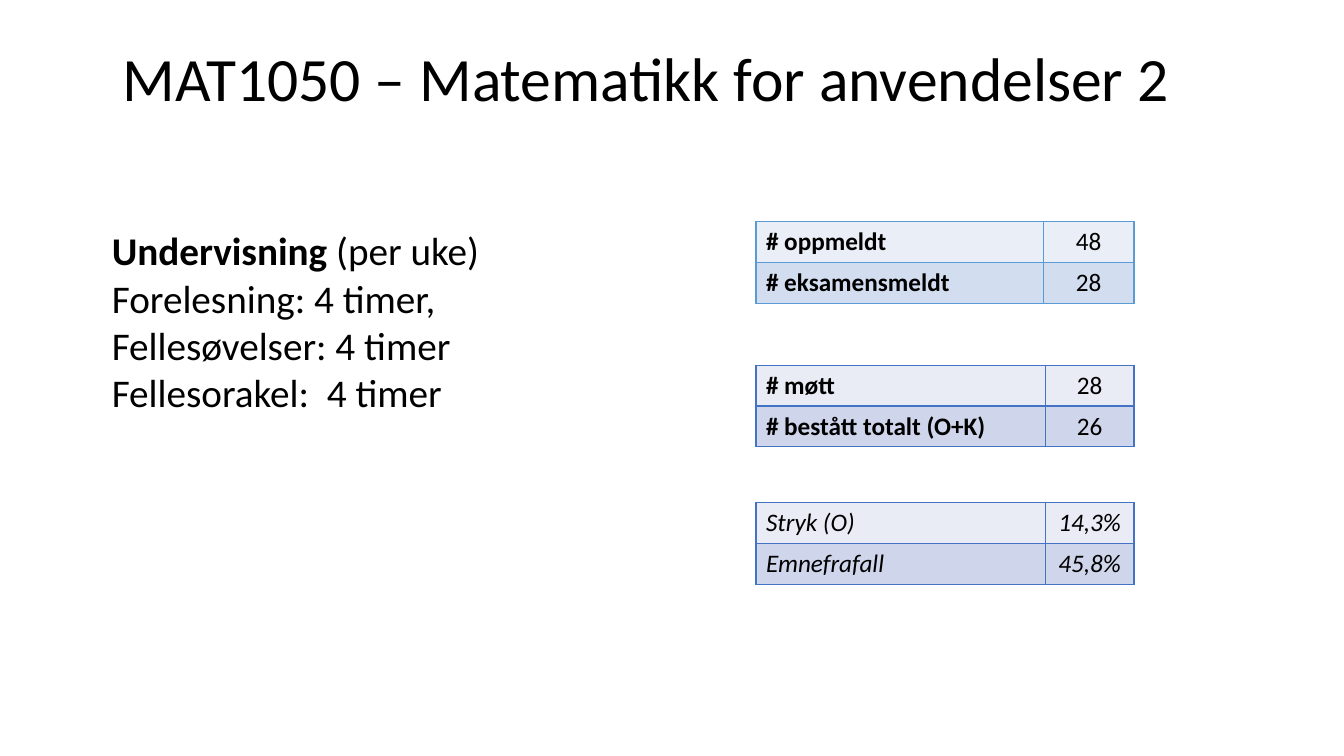
from dataclasses import dataclass

from lxml.etree import SubElement
from pptx import Presentation
from pptx.dml.color import RGBColor as RGB
from pptx.enum.text import PP_ALIGN as Align
from pptx.oxml.ns import qn
from pptx.util import Cm, Pt


@dataclass(frozen=True)
class Theme:
    font: str = "Calibri"
    text: str = "000000"
    title_size: int = 44
    body_size: int = 28
    table_size: int = 18
    border_width: int = 1
    # Border, first row, second row
    light: tuple = ("5B9BD5", "EAEFF7", "D2DEEF")
    dark: tuple = ("4472C4", "E9EBF5", "CFD5EA")


THEME = Theme()


def add_run(p, text, size, bold=False, italic=False):
    r = p.add_run()
    r.text = text
    r.font.name = THEME.font
    r.font.size = Pt(size)
    r.font.bold = bold
    r.font.italic = italic
    r.font.color.rgb = RGB.from_string(THEME.text)


def add_text(slide, box, lines, size):
    """Each line is a list of (text, bold) runs."""
    tf = slide.shapes.add_textbox(*map(Cm, box)).text_frame
    tf.word_wrap = True
    for i, line in enumerate(lines):
        p = tf.add_paragraph() if i else tf.paragraphs[0]
        for text, bold in line:
            add_run(p, text, size, bold)


def set_borders(cell, color):
    tc_pr = cell._tc.get_or_add_tcPr()
    for side in ("lnL", "lnR", "lnT", "lnB"):
        ln = SubElement(tc_pr, qn(f"a:{side}"), w=str(Pt(THEME.border_width)))
        fill = SubElement(ln, qn("a:solidFill"))
        SubElement(fill, qn("a:srgbClr"), val=color)


def add_figures(slide, box, rows, colors, value_width, italic=False):
    """Table of labels and centred values; labels are bold unless italic."""
    left, top, width, height = box
    table = slide.shapes.add_table(len(rows), 2, *map(Cm, box)).table
    table.first_row = table.horz_banding = False
    table.columns[0].width = Cm(width - value_width)
    table.columns[1].width = Cm(value_width)
    border, *fills = colors
    for i, (row, fill) in enumerate(zip(rows, fills)):
        table.rows[i].height = Cm(height / len(rows))
        for j, text in enumerate(row):
            cell = table.cell(i, j)
            set_borders(cell, border)
            cell.fill.solid()
            cell.fill.fore_color.rgb = RGB.from_string(fill)
            p = cell.text_frame.paragraphs[0]
            p.alignment = Align.CENTER if j else Align.LEFT
            add_run(p, text, THEME.table_size, not italic and j == 0, italic)


def main():
    prs = Presentation()
    prs.slide_width, prs.slide_height = Cm(33.87), Cm(19.05)
    slide = prs.slides.add_slide(prs.slide_layouts[6])

    # Title
    title = "MAT1050 – Matematikk for anvendelser 2"
    add_text(slide, (2.84, 0.89, 31, 2.13), [[(title, False)]], THEME.title_size)

    # Weekly teaching
    teaching = [
        [("Undervisning ", True), ("(per uke)", False)],
        [("Forelesning: 4 timer,", False)],
        [("Fellesøvelser: 4 timer", False)],
        [("Fellesorakel:  4 timer", False)],
    ]
    add_text(slide, (2.57, 5.59, 10.82, 5.08), teaching, THEME.body_size)

    # Exam figures
    tables = [
        (5.59, [("# oppmeldt", "48"), ("# eksamensmeldt", "28")],
         THEME.light, 2.29, False),
        (9.2, [("# møtt", "28"), ("# bestått totalt (O+K)", "26")],
         THEME.dark, 2.24, False),
        (12.67, [("Stryk (O)", "14,3%"), ("Emnefrafall", "45,8%")],
         THEME.dark, 2.24, True),
    ]
    for top, rows, colors, value_width, italic in tables:
        box = (19.05, top, 9.53, 2.06)
        add_figures(slide, box, rows, colors, value_width, italic)

    prs.save("out.pptx")


if __name__ == "__main__":
    main()
